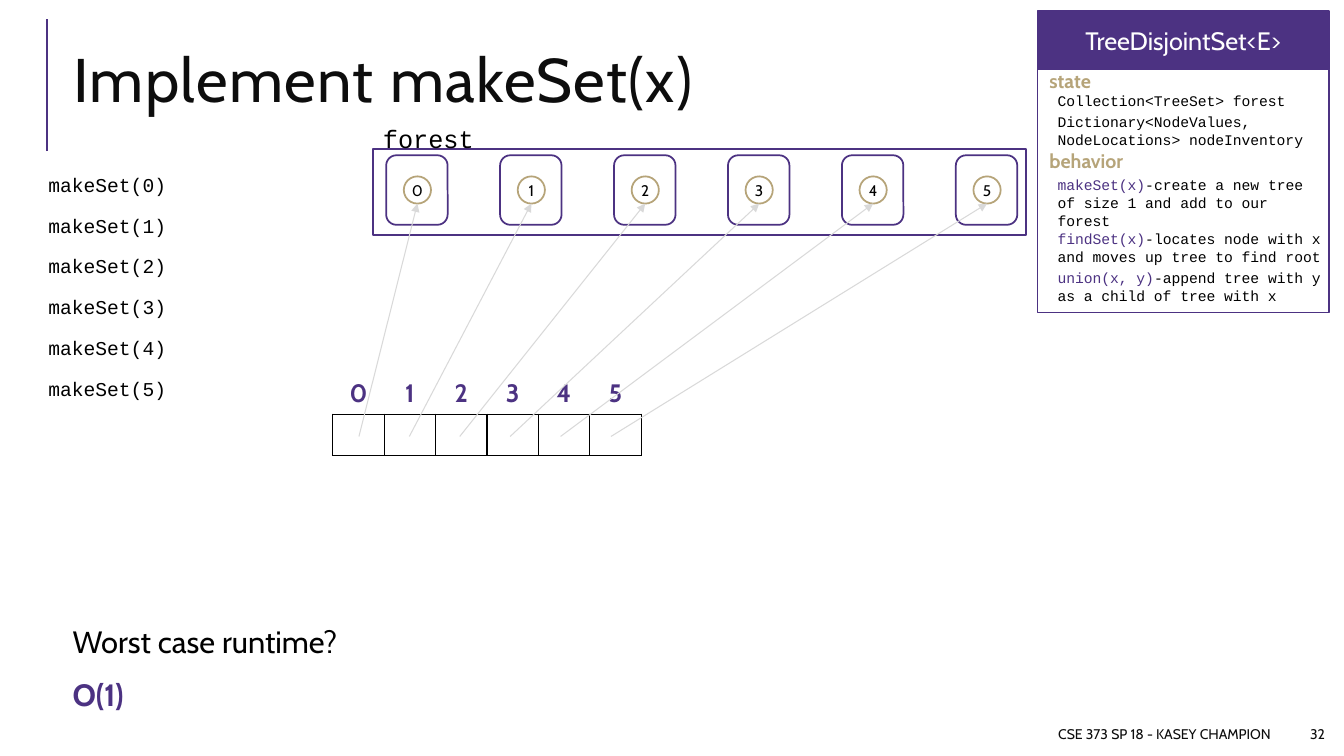
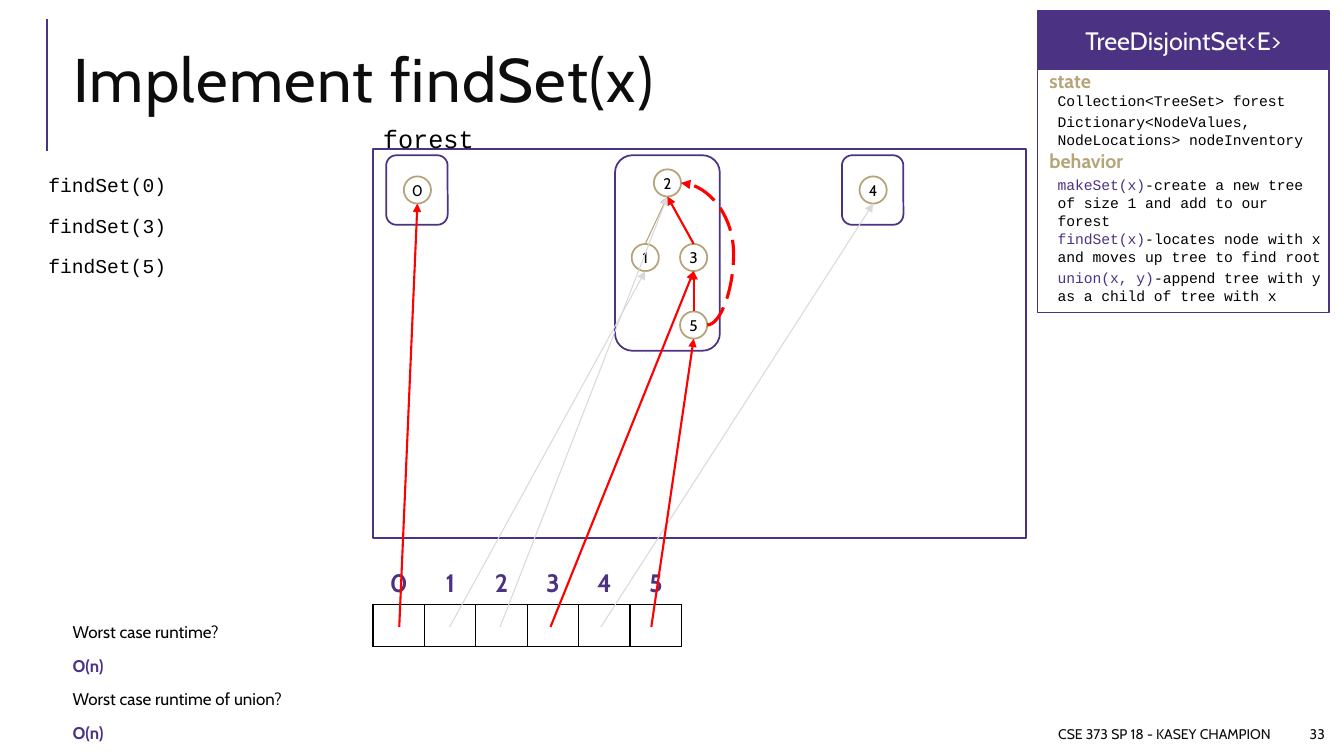
"""Build two slides on a tree-based disjoint set: makeSet and findSet."""
from dataclasses import dataclass

from lxml.etree import SubElement
from pptx import Presentation
from pptx.dml.color import RGBColor as RGB
from pptx.enum.dml import MSO_LINE
from pptx.enum.shapes import MSO_CONNECTOR as LINK, MSO_SHAPE as SHAPE
from pptx.enum.text import MSO_ANCHOR as ANCHOR, PP_ALIGN as ALIGN
from pptx.oxml.ns import qn
from pptx.util import Inches, Pt


@dataclass(frozen=True)
class Theme:
    purple: RGB = RGB.from_string("4C3282")
    gold: RGB = RGB.from_string("B6A479")
    black: RGB = RGB.from_string("000000")
    ink: RGB = RGB.from_string("0D0D0D")
    white: RGB = RGB.from_string("FFFFFF")
    grey: RGB = RGB.from_string("D9D9D9")
    red: RGB = RGB.from_string("FF0000")
    sans: str = "Cabin"
    mono: str = "Courier New"
    title: float = 44
    question: float = 22
    small_question: float = 12.1
    heading: float = 18
    call: float = 14
    section: float = 14
    node: float = 11
    code: float = 10.5
    footer: float = 10


theme = Theme()
LIST = dict(insets=(0.15, 0.05, 0.05, 0.05), before=12, after=2)
NODE = 0.27
NODE_TOP = 1.75
TREE_TOP = 1.54
CELL = 0.51
KEYS = range(6)
NODE_CENTERS = [4.14 + 1.13 * key for key in KEYS]


def write(frame, lines, size, font=theme.sans, colour=theme.black, bold=False,
          align=ALIGN.LEFT, anchor=ANCHOR.TOP, insets=(0.1, 0.05, 0.1, 0.05),
          leading=1.0, before=0, after=0, tracking=0):
    """Fill a frame; a line is a string or a list of (words, colour, bold)."""
    frame.word_wrap = True
    frame.vertical_anchor = anchor
    (frame.margin_left, frame.margin_top,
     frame.margin_right, frame.margin_bottom) = map(Inches, insets)
    for number, line in enumerate(lines):
        paragraph = frame.add_paragraph() if number else frame.paragraphs[0]
        paragraph.alignment = align
        paragraph.line_spacing = leading
        paragraph.space_before, paragraph.space_after = Pt(before), Pt(after)
        runs = [(line, colour, bold)] if isinstance(line, str) else line
        for words, run_colour, run_bold in runs:
            run = paragraph.add_run()
            run.text = words
            run.font.name, run.font.size = font, Pt(size)
            run.font.color.rgb, run.font.bold = run_colour, run_bold
            if tracking:
                run.font._element.set("spc", str(tracking * 100))


def draw(slide, at, outline=theme.purple, fill=None, kind=SHAPE.RECTANGLE):
    """Add an outlined shape, unfilled unless a fill is given."""
    shape = slide.shapes.add_shape(kind, *map(Inches, at))
    shape.shadow.inherit = False
    shape.line.color.rgb, shape.line.width = outline, Pt(1.25)
    if fill is None:
        shape.fill.background()
    else:
        shape.fill.solid()
        shape.fill.fore_color.rgb = fill
    return shape


behaviors = [
    (1.7, 0.63, "makeSet(x)", "-create a new tree of size 1 and add to our forest"),
    (2.23, 0.47, "findSet(x)", "-locates node with x and moves up tree to find root"),
    (2.62, 0.47, "union(x, y)", "-append tree with y as a child of tree with x"),
]
states = [
    (0.86, 0.28, "Collection<TreeSet> forest"),
    (1.07, 0.45, "Dictionary<NodeValues, NodeLocations> nodeInventory"),
]
lessons = [
    dict(
        operation="makeSet", page="32", arguments=KEYS, forest_height=0.85,
        nodes=[(center, NODE_TOP) for center in NODE_CENTERS],
        trees=[(center - 0.31, 0.61, 0.69) for center in NODE_CENTERS],
        array=(3.3, 3.7), parents=[], visited=[], shortcut=[],
        runtimes=[("Worst case runtime?", "O(1)")],
        runtime_height=0.96, runtime_size=theme.question, runtime_leading=0.9),
    dict(
        operation="findSet", page="33", arguments=[0, 3, 5], forest_height=3.86,
        nodes=[(NODE_CENTERS[0], NODE_TOP), (6.4, 2.42), (6.62, 1.68),
               (6.88, 2.42), (NODE_CENTERS[4], NODE_TOP), (6.88, 3.09)],
        trees=[(NODE_CENTERS[0] - 0.31, 0.61, 0.69), (6.1, 1.04, 1.94),
               (NODE_CENTERS[4] - 0.31, 0.61, 0.69)],
        array=(3.7, 5.59), parents=[(5, 3), (1, 2), (3, 2)],
        visited=[0, 3, 5], shortcut=[(5, 2)],
        runtimes=[("Worst case runtime?", "O(n)"),
                  ("Worst case runtime of union?", "O(n)")],
        runtime_height=1.32, runtime_size=theme.small_question,
        runtime_leading=0.7),
]

deck = Presentation()
deck.slide_width, deck.slide_height = Inches(13.33), Inches(7.5)

for lesson in lessons:
    slide = deck.slides.add_slide(deck.slide_layouts[6])
    nodes = lesson["nodes"]

    draw(slide, (10.29, 0.69, 2.89, 2.41))
    class_name = draw(slide, (10.29, 0.11, 2.89, 0.58), fill=theme.purple)
    write(class_name.text_frame, ["TreeDisjointSet<E>"], theme.heading,
          colour=theme.white, align=ALIGN.CENTER, anchor=ANCHOR.MIDDLE)

    draw(slide, (3.7, 1.48, 6.48, lesson["forest_height"]))
    for left, width, height in lesson["trees"]:
        draw(slide, (left, TREE_TOP, width, height), kind=SHAPE.ROUNDED_RECTANGLE)
    for key, (center, top) in enumerate(nodes):
        node = draw(slide, (center - NODE / 2, top, NODE, NODE),
                    theme.gold, theme.white, SHAPE.OVAL)
        write(node.text_frame, [str(key)], theme.node, align=ALIGN.CENTER,
              anchor=ANCHOR.MIDDLE, insets=(0, 0, 0, 0))

    answers = [line for question, answer in lesson["runtimes"]
               for line in (question, [(answer, theme.purple, True)])]
    footer = dict(size=theme.footer, colour=theme.ink, align=ALIGN.RIGHT,
                  anchor=ANCHOR.MIDDLE)
    section = dict(size=theme.section, colour=theme.gold, bold=True)
    code = dict(size=theme.code, font=theme.mono)
    texts = [
        ((0.63, 0.29, 9.5, 1.11), [f"Implement {lesson['operation']}(x)"],
         dict(size=theme.title, colour=theme.ink, anchor=ANCHOR.MIDDLE,
              leading=0.8, tracking=1)),
        ((0.33, 1.69, 2.27, 3.5),
         [f"{lesson['operation']}({key})" for key in lesson["arguments"]],
         dict(LIST, size=theme.call, font=theme.mono, leading=0.9)),
        ((0.57, 6.17, 5.5, lesson["runtime_height"]), answers,
         dict(LIST, size=lesson["runtime_size"], leading=lesson["runtime_leading"])),
        ((3.7, 1.17, 1.3, 0.4), ["forest"],
         dict(size=theme.heading, font=theme.mono)),
        ((10.31, 0.63, 2.23, 0.34), ["state"], section),
        ((10.31, 1.43, 2.23, 0.34), ["behavior"], section),
        ((6.25, 7.13, 6.45, 0.3), ["CSE 373 SP 18 - KASEY CHAMPION"], footer),
        ((12.78, 7.13, 0.46, 0.3), [lesson["page"]], footer),
    ]
    texts += [((10.39, top, 2.85, height), [field], code)
              for top, height, field in states]
    texts += [((10.39, top, 2.85, height),
               [[(call, theme.purple, False), (effect, theme.black, False)]], code)
              for top, height, call, effect in behaviors]
    for at, lines, style in texts:
        write(slide.shapes.add_textbox(*map(Inches, at)).text_frame, lines, **style)

    array_left, array_top = lesson["array"]
    array = slide.shapes.add_table(
        2, len(KEYS), *map(Inches, (array_left, array_top, CELL * len(KEYS), 0.82))).table
    array.first_row = array.horz_banding = False
    for column in array.columns:
        column.width = Inches(CELL)
    for row_number, row in enumerate(array.rows):
        row.height = Inches(0.41)
        for key, cell in enumerate(row.cells):
            for side in ("L", "R", "T", "B"):
                edge_colour = theme.black if row_number or side == "B" else theme.white
                edge = SubElement(cell._tc.get_or_add_tcPr(), qn(f"a:ln{side}"),
                                  w=str(Pt(1)))
                SubElement(SubElement(edge, qn("a:solidFill")), qn("a:srgbClr"),
                           val=str(edge_colour))
            cell.fill.background()
            if row_number == 0:
                write(cell.text_frame, [str(key)], theme.heading,
                      colour=theme.purple, bold=True, align=ALIGN.CENTER)

    to_node = [(array_left + 0.26 + 0.5 * key, array_top + 0.63, center, top + NODE)
               for key, (center, top) in enumerate(nodes)]
    to_parent = {child: (nodes[child][0], nodes[child][1],
                         nodes[parent][0], nodes[parent][1] + NODE)
                 for child, parent in lesson["parents"]}
    links = [((0.47, 1.5, 0.47, 0.19), theme.purple, 1.5, "plain")]
    links += [(ends, theme.gold, 0.75, "arrow") for ends in to_parent.values()]
    links += [(ends, theme.grey, 0.75, "arrow") for ends in to_node]
    for key in lesson["visited"]:
        links.append((to_node[key], theme.red, 1.5, "arrow"))
        if key in to_parent:
            links.append((to_parent[key], theme.red, 1.5, "arrow"))
    for child, root in lesson["shortcut"]:
        ends = [edge for center, top in (nodes[child], nodes[root])
                for edge in (center + NODE / 2, top + NODE / 2)]
        links.append((ends, theme.red, 2.25, "curve"))

    for ends, colour, width, style in links:
        curved = style == "curve"
        link = slide.shapes.add_connector(
            LINK.CURVE if curved else LINK.STRAIGHT, *map(Inches, ends))
        link.line.color.rgb, link.line.width = colour, Pt(width)
        properties = link._element.spPr
        if curved:
            link.line.dash_style = MSO_LINE.LONG_DASH
            geometry = properties.find(qn("a:prstGeom"))
            SubElement(geometry.find(qn("a:avLst")), qn("a:gd"),
                       name="adj1", fmla="val -100800")
        if style != "plain":
            SubElement(properties.find(qn("a:ln")), qn("a:tailEnd"), type="triangle")
        SubElement(properties, qn("a:effectLst"))

deck.save("out.pptx")
